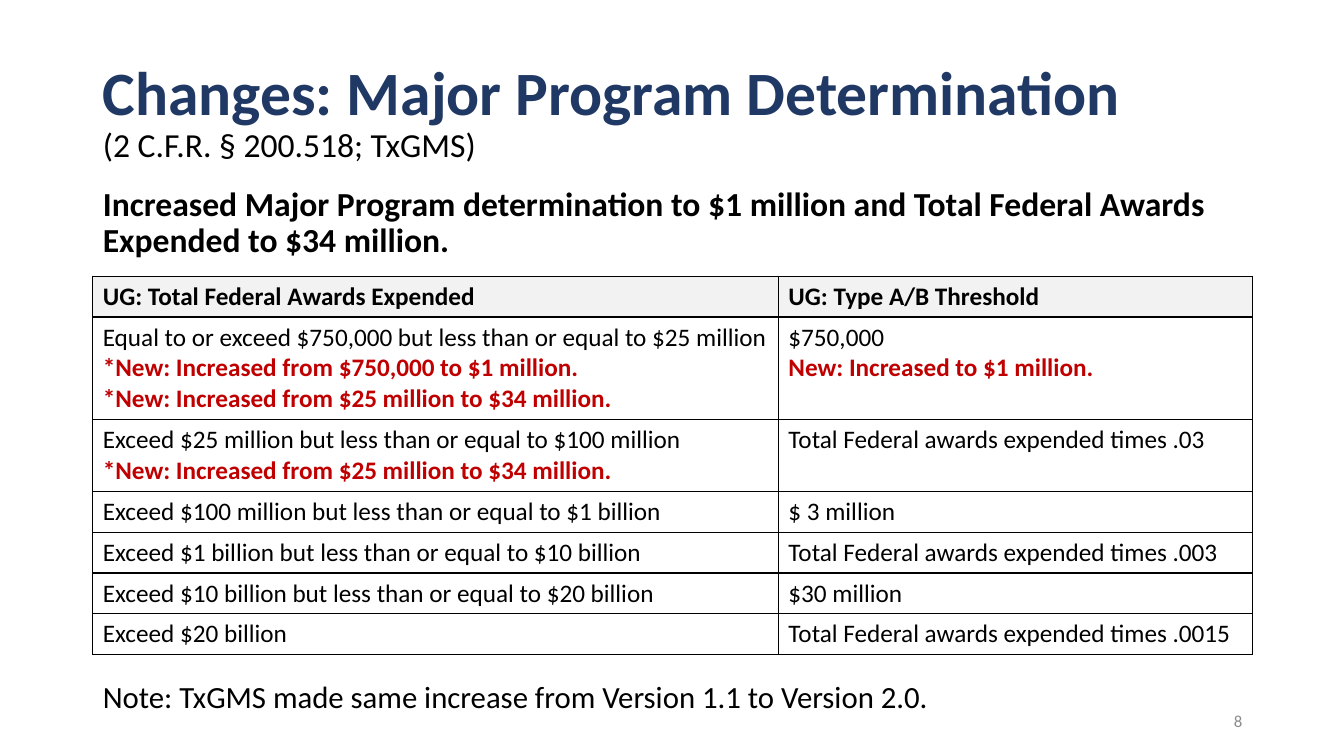
from dataclasses import dataclass
from lxml.etree import SubElement
from pptx import Presentation
from pptx.dml.color import RGBColor
from pptx.enum.text import MSO_ANCHOR, MSO_AUTO_SIZE, PP_ALIGN
from pptx.oxml.ns import qn
from pptx.util import Inches, Pt

TITLE = "Changes: Major Program Determination"
CITE = "(2 C.F.R. § 200.518; TxGMS)"
LEAD = ("Increased Major Program determination to $1 million "
        "and Total Federal Awards Expended to $34 million.")
NOTE = "Note: TxGMS made same increase from Version 1.1 to Version 2.0."
PAGE = "8"
HEAD = ("UG: Total Federal Awards Expended", "UG: Type A/B Threshold")
TIERS = [
    (["Equal to or exceed $750,000 but less than or equal to $25 million",
      "*New: Increased from $750,000 to $1 million.",
      "*New: Increased from $25 million to $34 million."],
     ["$750,000", "New: Increased to $1 million."]),
    (["Exceed $25 million but less than or equal to $100 million",
      "*New: Increased from $25 million to $34 million."],
     ["Total Federal awards expended times .03"]),
    (["Exceed $100 million but less than or equal to $1 billion"],
     ["$ 3 million"]),
    (["Exceed $1 billion but less than or equal to $10 billion"],
     ["Total Federal awards expended times .003"]),
    (["Exceed $10 billion but less than or equal to $20 billion"],
     ["$30 million"]),
    (["Exceed $20 billion"],
     ["Total Federal awards expended times .0015"]),
]


@dataclass(frozen=True)
class Theme:
    face: str = "Calibri"
    navy: str = "203864"
    black: str = "000000"
    red: str = "C00000"
    gray: str = "8C8C8C"
    pale: str = "F2F2F2"
    title: int = 44
    lead: int = 24
    note: int = 22
    cell: int = 18
    page: int = 12


THEME = Theme()
LEFT, WIDTH = 0.92, 11.5
COLS = (6.8, 4.7)


def style(font, size, color=THEME.black, bold=False):
    font.name = THEME.face
    font.size = Pt(size)
    font.bold = bold
    font.color.rgb = RGBColor.from_string(color)


def place(shape, left, top, width, height, anchor):
    shape.left, shape.top = Inches(left), Inches(top)
    shape.width, shape.height = Inches(width), Inches(height)
    frame = shape.text_frame
    frame.word_wrap = True
    frame.auto_size = MSO_AUTO_SIZE.NONE
    frame.vertical_anchor = anchor
    return frame.paragraphs[0]


def add_title(shape):
    para = place(shape, LEFT, 0.4, WIDTH, 1.45, MSO_ANCHOR.MIDDLE)
    para.alignment = PP_ALIGN.LEFT
    para.line_spacing = 0.9
    run = para.add_run()
    run.text = TITLE
    style(run.font, THEME.title, THEME.navy, True)
    para.add_line_break()
    run = para.add_run()
    run.text = CITE
    style(run.font, THEME.lead)


def add_body(shape, text, top, height, anchor, size, bold):
    para = place(shape, LEFT, top, WIDTH, height, anchor)
    para.text = text
    props = para._p.get_or_add_pPr()
    props.set("marL", "0")
    props.set("indent", "0")
    SubElement(props, qn("a:buNone"))
    para.line_spacing = 0.9
    para.space_before = Pt(10)
    style(para.font, size, bold=bold)


def frame_cell(cell):
    props = cell._tc.get_or_add_tcPr()
    for side in ("L", "R", "T", "B"):
        line = SubElement(props, qn(f"a:ln{side}"), w=str(Pt(1)))
        fill = SubElement(line, qn("a:solidFill"))
        SubElement(fill, qn("a:srgbClr"), val=THEME.black)


def fill_cell(cell, lines, head):
    frame_cell(cell)
    if head:
        cell.fill.solid()
        cell.fill.fore_color.rgb = RGBColor.from_string(THEME.pale)
    else:
        cell.fill.background()
    cell.text_frame.text = "\n".join(lines)
    for para in cell.text_frame.paragraphs:
        new = "New:" in para.text
        style(para.font, THEME.cell, THEME.red if new else THEME.black,
              head or new)


def add_tiers(slide):
    rows = [tuple([text] for text in HEAD)] + TIERS
    highs = [Inches(0.1) + Pt(22) * max(map(len, row)) for row in rows]
    table = slide.shapes.add_table(
        len(rows), len(COLS), Inches(LEFT), Inches(2.74),
        Inches(WIDTH), sum(highs)).table
    table.first_row = table.horz_banding = False
    for col, width in zip(table.columns, COLS):
        col.width = Inches(width)
    for r, (row, high) in enumerate(zip(rows, highs)):
        table.rows[r].height = high
        for c, lines in enumerate(row):
            fill_cell(table.cell(r, c), lines, r == 0)


def add_page(slide):
    box = slide.shapes.add_textbox(0, 0, 0, 0)
    para = place(box, 9.42, 6.95, 3, 0.4, MSO_ANCHOR.MIDDLE)
    para.text = PAGE
    para.alignment = PP_ALIGN.RIGHT
    style(para.font, THEME.page, THEME.gray)


def main():
    deck = Presentation()
    deck.slide_width, deck.slide_height = Inches(13.33), Inches(7.5)
    slide = deck.slides.add_slide(deck.slide_layouts.get_by_name("Two Content"))
    title, lead, note = slide.placeholders
    add_title(title)
    add_body(lead, LEAD, 1.81, 0.83, MSO_ANCHOR.TOP, THEME.lead, True)
    add_tiers(slide)
    add_body(note, NOTE, 6.6, 0.55, MSO_ANCHOR.BOTTOM, THEME.note, False)
    add_page(slide)
    deck.save("out.pptx")


if __name__ == "__main__":
    main()
